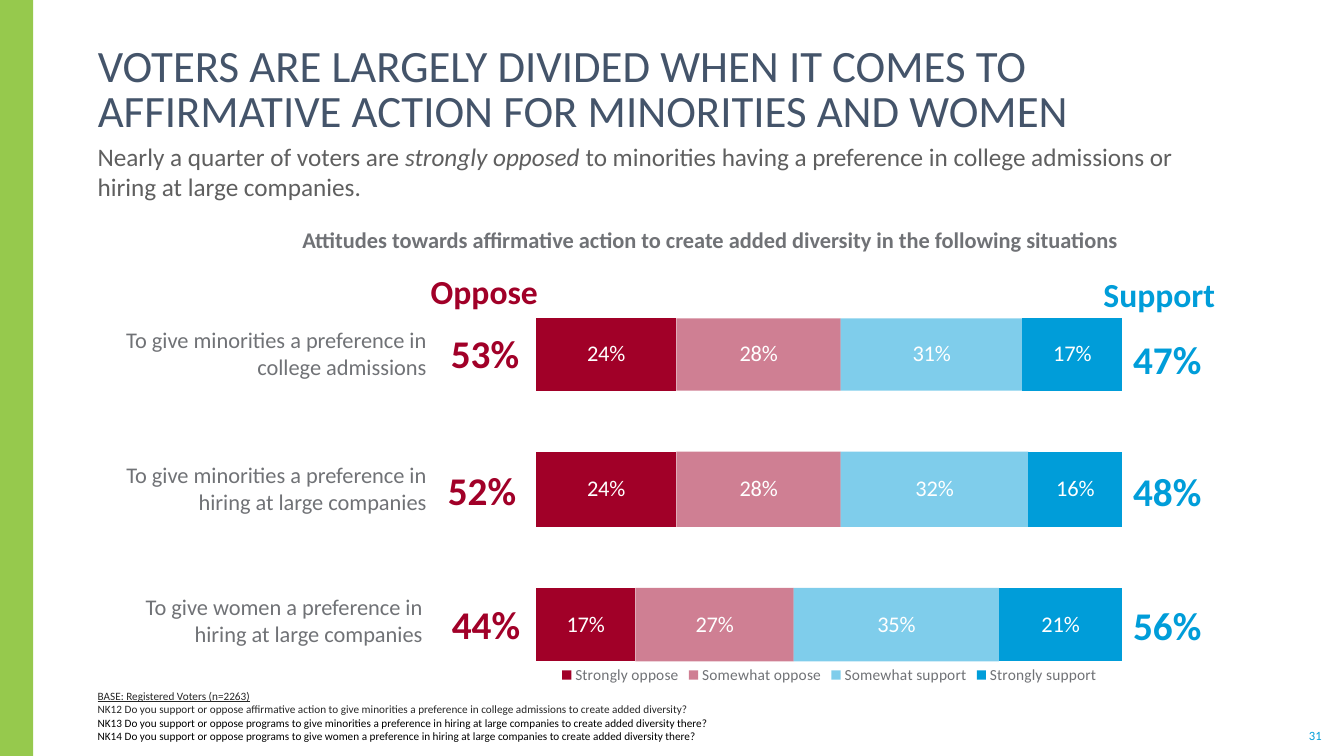
from dataclasses import dataclass

from lxml import etree
from pptx import Presentation
from pptx.chart.data import CategoryChartData
from pptx.dml.color import RGBColor
from pptx.enum.chart import XL_CHART_TYPE, XL_LABEL_POSITION, XL_LEGEND_POSITION
from pptx.enum.shapes import MSO_SHAPE
from pptx.enum.text import MSO_ANCHOR, MSO_AUTO_SIZE, PP_ALIGN
from pptx.oxml import parse_xml
from pptx.oxml.ns import nsdecls, qn
from pptx.util import Inches, Pt

FONT = "Calibri"
COLORS = {
    "band": "96C94D",
    "title": "44546A",
    "subtitle": "5F5F5F",
    "label": "707276",
    "note": "262626",
    "black": "000000",
    "white": "FFFFFF",
    "oppose": "A10028",
    "support": "009DD9",
}
# Series name, colour and opacity in percent
ANSWERS = [
    ("Strongly oppose", "oppose", 100),
    ("Somewhat oppose", "oppose", 50),
    ("Somewhat support", "support", 50),
    ("Strongly support", "support", 100),
]
NOTES = [
    ("BASE: Registered Voters (n=2263)", "note"),
    ("NK12 Do you support or oppose affirmative action to give minorities a preference "
     "in college admissions to create added diversity?", "note"),
    ("NK13 Do you support or oppose programs to give minorities a preference in hiring "
     "at large companies to create added diversity there?", "black"),
    ("NK14 Do you support or oppose programs to give women a preference in hiring "
     "at large companies to create added diversity there?", "black"),
]


@dataclass
class Situation:
    """One bar with its label and totals; boxes are left, top, width, height."""
    label: str
    label_box: tuple
    oppose: str
    oppose_box: tuple
    support: str
    support_box: tuple
    shares: tuple
    chart_box: tuple


SITUATIONS = [
    Situation("To give minorities a preference in college admissions", (1, 3.19, 3.33, 0.64),
              "53%", (4.32, 2.73, 2.72, 1.11), "47%", (11.14, 3.28, 0.89, 0.57),
              (0.24, 0.28, 0.31, 0.17), (5.18, 2.83, 6.09, 1.31)),
    Situation("To give minorities a preference in hiring at large companies",
              (1.08, 4.53, 3.25, 0.64),
              "52%", (4.29, 4.09, 2.72, 1.11), "48%", (11.14, 4.59, 0.89, 0.57),
              (0.24, 0.28, 0.32, 0.16), (5.18, 4.14, 6.09, 1.36)),
    Situation("To give women a preference in hiring at large companies",
              (1.04, 5.84, 3.25, 0.64),
              "44%", (4.33, 5.42, 2.72, 1.11), "56%", (11.14, 5.92, 0.89, 0.57),
              (0.17, 0.27, 0.35, 0.21), (5.18, 5.5, 6.09, 1.33)),
]


def inches(box):
    return [Inches(length) for length in box]


def style_font(font, size, color, bold=False):
    font.name = FONT
    font.size = Pt(size)
    font.bold = bold
    font.color.rgb = RGBColor.from_string(COLORS[color])


def set_frame(text_frame, anchor, margins, wrap=True):
    """Margins are the side and the top-and-bottom inset in inches."""
    side, end = inches(margins)
    text_frame.margin_left = text_frame.margin_right = side
    text_frame.margin_top = text_frame.margin_bottom = end
    text_frame.vertical_anchor = anchor
    text_frame.word_wrap = wrap
    text_frame.auto_size = MSO_AUTO_SIZE.NONE


def fill_paragraph(paragraph, parts, size, color, bold=False, align=PP_ALIGN.LEFT):
    paragraph.alignment = align
    for part in parts:
        run = paragraph.add_run()
        run.text = part
        style_font(run.font, size, color, bold)


def add_text(slide, box, parts, size, color, bold=False, align=PP_ALIGN.LEFT,
             anchor=MSO_ANCHOR.TOP, margins=(0.1, 0.05), wrap=True):
    text_box = slide.shapes.add_textbox(*inches(box))
    set_frame(text_box.text_frame, anchor, margins, wrap)
    paragraph = text_box.text_frame.paragraphs[0]
    fill_paragraph(paragraph, parts, size, color, bold, align)
    return text_box


def add_oppose_text(slide, box, text, size):
    """Rounded box without fill or line, its text at the lower left."""
    shape = slide.shapes.add_shape(MSO_SHAPE.ROUNDED_RECTANGLE, *inches(box))
    shape.shadow.inherit = False
    shape.fill.background()
    shape.line.fill.background()
    set_frame(shape.text_frame, MSO_ANCHOR.BOTTOM, (0.1, 0.05))
    fill_paragraph(shape.text_frame.paragraphs[0], [text], size, "oppose", True)


def set_title(slide, text):
    title = slide.shapes.title
    title.left, title.top, title.width, title.height = inches((0.87, 0.74, 11.91, 0.62))
    set_frame(title.text_frame, MSO_ANCHOR.BOTTOM, (0.1, 0))
    paragraph = title.text_frame.paragraphs[0]
    paragraph.line_spacing = 0.85
    fill_paragraph(paragraph, [text], 32, "title")


def add_notes(slide):
    (base, base_color), *questions = NOTES
    text_box = add_text(slide, (0.87, 6.97, 11.91, 0.4), [base], 8, base_color,
                        anchor=MSO_ANCHOR.BOTTOM, margins=(0.1, 0))
    text_box.text_frame.paragraphs[0].runs[0].font.underline = True
    for question, color in questions:
        paragraph = text_box.text_frame.add_paragraph()
        fill_paragraph(paragraph, [question], 8, color)


def place_plot(chart):
    """Fix the inner plot area as fractions of the chart."""
    plot_area = chart.plots[0]._element.getparent()
    for old_layout in plot_area.findall(qn("c:layout")):
        plot_area.remove(old_layout)
    layout = parse_xml(f'<c:layout {nsdecls("c")}><c:manualLayout/></c:layout>')
    settings = [("layoutTarget", "inner"), ("xMode", "edge"), ("yMode", "edge"),
                ("x", "0.022"), ("y", "0.094"), ("w", "0.955"), ("h", "0.862")]
    for name, value in settings:
        etree.SubElement(layout[0], qn(f"c:{name}")).set("val", value)
    plot_area.insert(0, layout)


def add_bar(slide, box, shares, has_legend):
    data = CategoryChartData(number_format="0%")
    data.categories = ["1"]
    for (name, _, _), share in zip(ANSWERS, shares):
        data.add_series(name, [share])
    chart = slide.shapes.add_chart(XL_CHART_TYPE.BAR_STACKED_100, *inches(box), data).chart
    style_font(chart.font, 16, "white")
    chart.has_title = False
    chart.category_axis.visible = False
    chart.value_axis.visible = False
    chart.value_axis.has_major_gridlines = False
    chart.value_axis.maximum_scale = 1
    plot = chart.plots[0]
    plot.gap_width = 57
    plot.overlap = 100
    plot.vary_by_categories = False
    for series, (_, color, opacity) in zip(plot.series, ANSWERS):
        series.format.fill.solid()
        series.format.fill.fore_color.rgb = RGBColor.from_string(COLORS[color])
        if opacity < 100:
            color_element = series._element.find(f".//{qn('a:srgbClr')}")
            etree.SubElement(color_element, qn("a:alpha")).set("val", str(opacity * 1000))
        labels = series.data_labels
        labels.show_value = True
        labels.number_format = "0%"
        labels.number_format_is_linked = False
        labels.position = XL_LABEL_POSITION.CENTER
        style_font(labels.font, 16, "white")
    chart.has_legend = has_legend
    if has_legend:
        chart.legend.position = XL_LEGEND_POSITION.BOTTOM
        chart.legend.include_in_layout = False
        style_font(chart.legend.font, 11, "label")
    place_plot(chart)


def add_situation(slide, situation, has_legend):
    add_bar(slide, situation.chart_box, situation.shares, has_legend)
    add_text(slide, situation.label_box, [situation.label], 16, "label", align=PP_ALIGN.RIGHT)
    add_oppose_text(slide, situation.oppose_box, situation.oppose, 28)
    add_text(slide, situation.support_box, [situation.support], 28, "support", True, wrap=False)


def main():
    presentation = Presentation()
    presentation.slide_width, presentation.slide_height = inches((13.33, 7.5))
    slide = presentation.slides.add_slide(presentation.slide_layouts[5])
    band = slide.shapes.add_shape(MSO_SHAPE.RECTANGLE, *inches((0, 0, 0.33, 7.5)))
    band.shadow.inherit = False
    band.fill.solid()
    band.fill.fore_color.rgb = RGBColor.from_string(COLORS["band"])
    band.line.fill.background()
    set_title(slide, "VOTERS ARE LARGELY DIVIDED WHEN IT COMES TO "
                     "AFFIRMATIVE ACTION FOR MINORITIES AND WOMEN")
    subtitle = add_text(slide, (0.87, 1.4, 11.05, 0.34),
                        ["Nearly a quarter of voters are ", "strongly opposed ",
                         "to minorities having a preference in college admissions "
                         "or hiring at large companies."],
                        18, "subtitle", margins=(0.1, 0))
    subtitle.text_frame.paragraphs[0].runs[1].font.italic = True
    add_text(slide, (2.43, 2.19, 9.23, 0.37),
             ["Attitudes towards affirmative action to create added diversity "
              "in the following situations"], 16, "label", True, PP_ALIGN.CENTER)
    for situation in SITUATIONS:
        add_situation(slide, situation, has_legend=situation is SITUATIONS[-1])
    add_oppose_text(slide, (4.15, 2.67, 1.92, 0.49), "Oppose", 24)
    add_text(slide, (10.83, 2.67, 1.32, 0.5), ["Support"], 24, "support", True,
             PP_ALIGN.RIGHT, wrap=False)
    add_notes(slide)
    add_text(slide, (12.97, 7.22, 0.15, 0.15), ["31"], 9, "support", align=PP_ALIGN.CENTER,
             anchor=MSO_ANCHOR.MIDDLE, margins=(0, 0), wrap=False)
    presentation.save("out.pptx")


if __name__ == "__main__":
    main()
